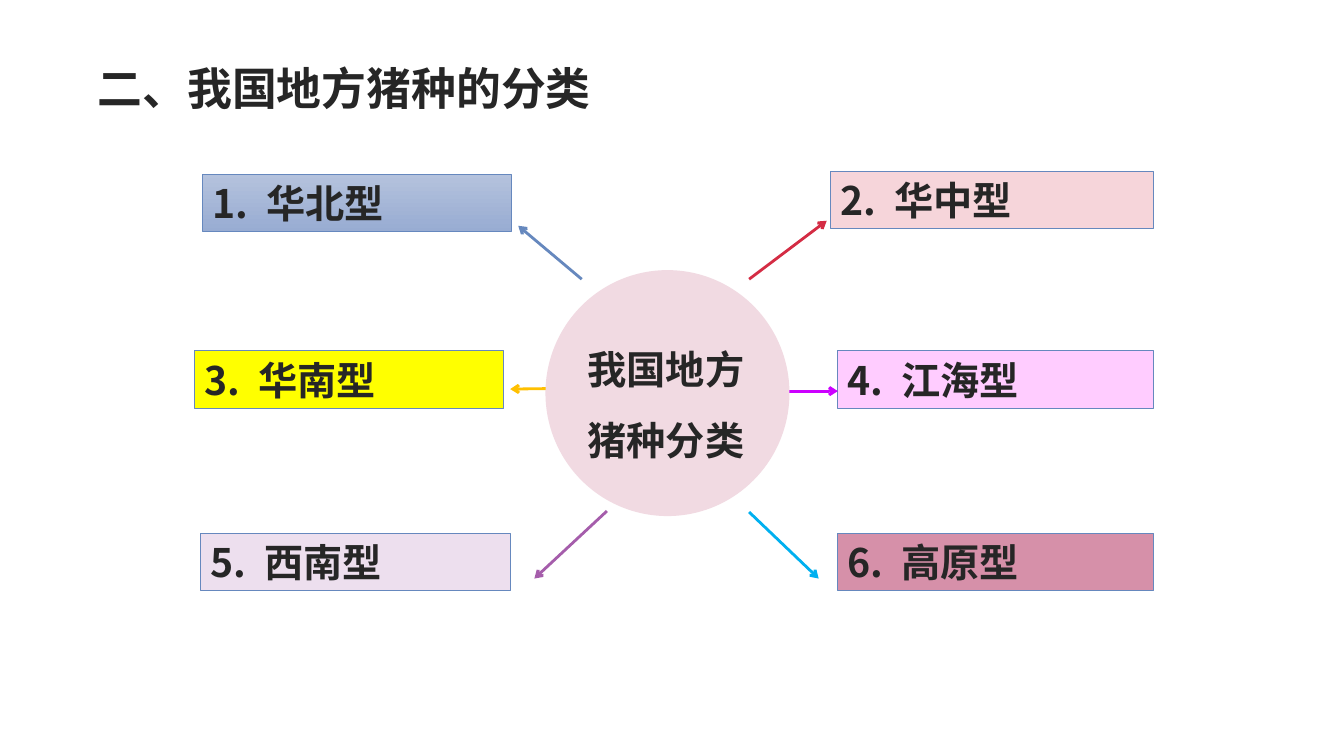
from lxml.etree import SubElement
from pptx import Presentation
from pptx.dml.color import RGBColor
from pptx.enum.shapes import MSO_CONNECTOR, MSO_SHAPE
from pptx.enum.text import MSO_ANCHOR, PP_ALIGN
from pptx.oxml.ns import qn
from pptx.util import Inches, Pt

TITLE = "二、我国地方猪种的分类"
CENTER_LINES = ["我国地方", "猪种分类"]

# label, left, top, width, fill (a pair is a gradient), arrow colour, arrow start, arrow end
TYPES = [
    ("1. 华北型", 2.01, 1.73, 3.06, ("B4C2DD", "98ACD2"), "6688BE", (5.77, 2.77), (5.14, 2.24)),
    ("2. 华中型", 8.24, 1.7, 3.2, "F6D5DA", "D42C44", (7.43, 2.77), (8.2, 2.19)),
    ("4. 江海型", 8.31, 3.48, 3.13, "FFCCFF", "CC00FF", (7.66, 3.88), (8.31, 3.88)),
    ("6. 高原型", 8.31, 5.29, 3.13, "D690A9", "00B0F0", (7.43, 5.08), (8.12, 5.74)),
    ("3. 华南型", 1.93, 3.48, 3.06, "FFFF00", "FFC000", (5.82, 3.85), (5.06, 3.86)),
    ("5. 西南型", 1.99, 5.29, 3.07, "EDDFEE", "A55DAB", (6.02, 5.07), (5.3, 5.74)),
]
LABEL_HEIGHT = 0.57

THEME = {
    "font": "Noto Sans CJK SC", "text": "262626", "title_size": 32, "body_size": 28,
    "outline": "6688BE", "outline_width": 0.5, "arrow_width": 2,
    "circle": "F1DAE2", "title_fill": "FFFFFF", "line_pitch": 50.7, "number_gap": 6.4,
}


def color(name):
    return RGBColor.from_string(name)


def style_span(span, size):
    font = span.font
    font.name, font.size, font.bold = THEME["font"], Pt(size), True
    font.color.rgb = color(THEME["text"])
    SubElement(font._element, qn("a:ea"), typeface=THEME["font"])


def add_block(page, kind, left, top, width, height, fill):
    block = page.shapes.add_shape(kind, Inches(left), Inches(top), Inches(width), Inches(height))
    block.shadow.inherit = False
    block.line.fill.background()
    if isinstance(fill, tuple):
        block.fill.gradient()
        block.fill.gradient_angle = 270
        for stop, name in zip(block.fill.gradient_stops, fill):
            stop.color.rgb = color(name)
    else:
        block.fill.solid()
        block.fill.fore_color.rgb = color(fill)
    frame = block.text_frame
    frame.margin_top = frame.margin_bottom = 0
    frame.vertical_anchor = MSO_ANCHOR.MIDDLE
    frame.paragraphs[0].alignment = PP_ALIGN.LEFT
    return block


def add_label(page, text, left, top, width, fill):
    box = add_block(page, MSO_SHAPE.RECTANGLE, left, top, width, LABEL_HEIGHT, fill)
    box.line.color.rgb = color(THEME["outline"])
    box.line.width = Pt(THEME["outline_width"])
    para = box.text_frame.paragraphs[0]
    for part in text.partition(" "):
        span = para.add_run()
        span.text = part
        style_span(span, THEME["body_size"])
        if part == " ":  # widen the gap after the number
            span.font._element.set("spc", str(round(THEME["number_gap"] * 100)))


def add_arrow(page, start, end, name):
    points = [Inches(value) for value in start + end]
    arrow = page.shapes.add_connector(MSO_CONNECTOR.STRAIGHT, *points)
    arrow.line.color.rgb = color(name)
    arrow.line.width = Pt(THEME["arrow_width"])
    SubElement(arrow.line._get_or_add_ln(), qn("a:tailEnd"), type="arrow")
    SubElement(arrow._element.spPr, qn("a:effectLst"))


def main():
    deck = Presentation()
    deck.slide_width, deck.slide_height = Inches(13.33), Inches(7.5)
    page = deck.slides.add_slide(deck.slide_layouts[6])

    # Six types, each with its arrow
    for text, left, top, width, fill, arrow_color, start, end in TYPES:
        add_label(page, text, left, top, width, fill)
        add_arrow(page, start, end, arrow_color)

    # Central circle and its caption
    add_block(page, MSO_SHAPE.OVAL, 5.41, 2.68, 2.42, 2.44, THEME["circle"])
    caption = page.shapes.add_textbox(Inches(5.72), Inches(3.1), Inches(1.77), Inches(1.51))
    frame = caption.text_frame
    frame.word_wrap = False
    frame.margin_top = Inches(0.09)
    frame.text = "\n".join(CENTER_LINES)
    for para in frame.paragraphs:
        para.alignment = PP_ALIGN.CENTER
        para.line_spacing = Pt(THEME["line_pitch"])
        style_span(para.runs[0], THEME["body_size"])

    # Title on a translucent white panel
    title = add_block(page, MSO_SHAPE.RECTANGLE, 0.87, 0.54, 5.15, 0.66, THEME["title_fill"])
    panel_color = title._element.spPr.find(".//" + qn("a:srgbClr"))
    SubElement(panel_color, qn("a:alpha"), val="57000")
    para = title.text_frame.paragraphs[0]
    para.text = TITLE
    style_span(para.runs[0], THEME["title_size"])

    deck.save("out.pptx")


if __name__ == "__main__":
    main()
